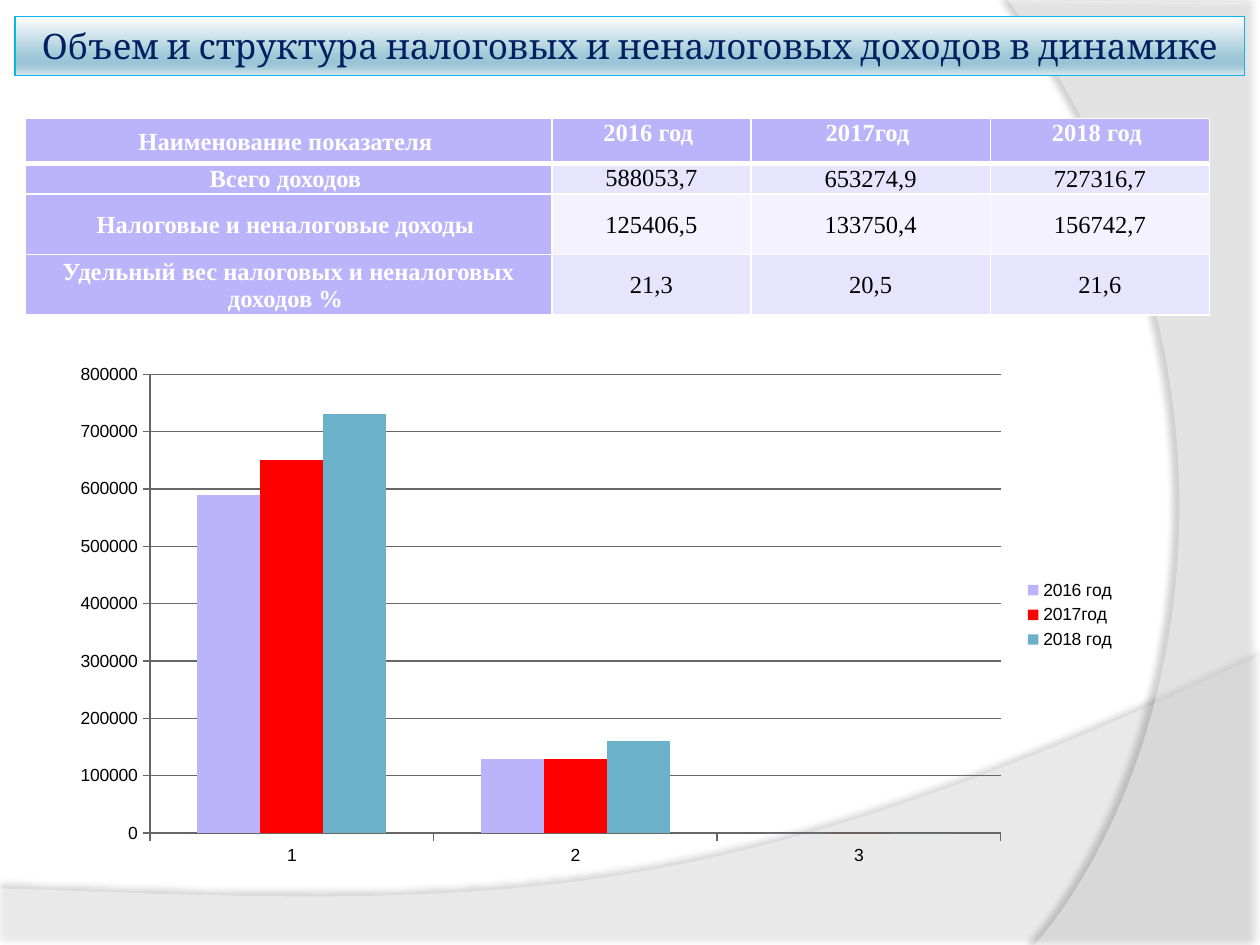
from dataclasses import dataclass

from lxml.etree import SubElement
from pptx import Presentation
from pptx.chart.data import CategoryChartData
from pptx.dml.color import RGBColor
from pptx.enum.chart import XL_CHART_TYPE, XL_LEGEND_POSITION, XL_TICK_MARK
from pptx.enum.shapes import MSO_SHAPE
from pptx.enum.text import MSO_ANCHOR, PP_ALIGN
from pptx.oxml import parse_xml
from pptx.oxml.ns import nsdecls, qn
from pptx.util import Inches, Pt


@dataclass(frozen=True)
class Theme:
    white: str = "FFFFFF"
    black: str = "000000"
    navy: str = "002060"
    title_line: str = "0AB3EC"
    title_stops: tuple = ((0, "FEFEFF"), (68, "9EC7D7"), (81, "9BC5D6"),
                          (86, "A5CAD9"), (100, "DAE8EE"))
    lilac: str = "BBB4FB"
    bands: tuple = ("E7E5FD", "F3F2FE")
    series: tuple = ("BBB4FB", "FF0000", "6BB1C9")
    grid: str = "666666"
    title_font: str = "Cambria"
    table_font: str = "Times New Roman"
    chart_font: str = "Arial"
    title_size: int = 20
    table_size: int = 14
    chart_size: int = 10


def rgb(value):
    return RGBColor.from_string(value)


class SlideBuilder:
    def __init__(self, slide, theme):
        self.s = slide
        self.theme = theme

    def style(self, p, font, size, color, bold=False):
        p.alignment = PP_ALIGN.CENTER
        p.font.name = font
        p.font.size = Pt(size)
        p.font.bold = bold
        p.font.color.rgb = rgb(color)

    def wave(self, corners, controls, opacity, shadow_opacity, distance, angle):
        pts = [(Inches(x), Inches(y)) for x, y in corners]
        fb = self.s.shapes.build_freeform(*pts[0])
        fb.add_line_segments(pts[1:], close=True)
        sp = fb.convert_to_shape()
        sp.fill.solid()
        sp.fill.fore_color.rgb = rgb(self.theme.white)
        sp.line.fill.background()
        spPr = sp._element.spPr
        curve = list(spPr.iter(qn("a:lnTo")))[-1]
        curve.tag = qn("a:cubicBezTo")
        for i, (x, y) in enumerate(controls):
            curve.insert(i, parse_xml(f'<a:pt {nsdecls("a")} x="{Inches(x) - sp.left}" '
                                      f'y="{Inches(y) - sp.top}"/>'))
        color = spPr.find(qn("a:solidFill"))[0]
        SubElement(color, qn("a:alpha"), val=str(opacity * 1000))
        spPr.append(parse_xml(
            f'<a:effectLst {nsdecls("a")}><a:outerShdw blurRad="{Pt(4)}" '
            f'dist="{Pt(distance)}" dir="{angle * 60000}" algn="ctr" rotWithShape="0">'
            f'<a:srgbClr val="{self.theme.black}"><a:alpha val="{shadow_opacity * 1000}"/>'
            '</a:srgbClr></a:outerShdw></a:effectLst>'))

    def title(self, text, x, y, w, h):
        t = self.theme
        sp = self.s.shapes.add_shape(MSO_SHAPE.RECTANGLE, Inches(x), Inches(y),
                                     Inches(w), Inches(h))
        sp.shadow.inherit = False
        sp.line.color.rgb = rgb(t.title_line)
        sp.line.width = Pt(0.75)
        stops = "".join(f'<a:gs pos="{pos * 1000}"><a:srgbClr val="{c}"/></a:gs>'
                        for pos, c in t.title_stops)
        sp._element.spPr.find(qn("a:prstGeom")).addnext(parse_xml(
            f'<a:gradFill {nsdecls("a")} rotWithShape="1"><a:gsLst>{stops}</a:gsLst>'
            '<a:lin ang="5400000" scaled="0"/></a:gradFill>'))
        tf = sp.text_frame
        tf.word_wrap = True
        tf.vertical_anchor = MSO_ANCHOR.MIDDLE
        p = tf.paragraphs[0]
        p.text = text
        self.style(p, t.title_font, t.title_size, t.navy)

    def borders(self, cell, bottom, top):
        tcPr = cell._tc.get_or_add_tcPr()
        widths = {"lnL": 1, "lnR": 1, "lnT": top, "lnB": bottom}
        for i, (tag, width) in enumerate(widths.items()):
            tcPr.insert(i, parse_xml(
                f'<a:{tag} {nsdecls("a")} w="{Pt(width)}"><a:solidFill>'
                f'<a:srgbClr val="{self.theme.white}"/></a:solidFill></a:{tag}>'))

    def table(self, rows, x, y, widths, heights):
        t = self.theme
        tbl = self.s.shapes.add_table(len(rows), len(widths), Inches(x), Inches(y),
                                      Inches(sum(widths)), Inches(sum(heights))).table
        for col, w in zip(tbl.columns, widths):
            col.width = Inches(w)
        for row, h in zip(tbl.rows, heights):
            row.height = Inches(h)
        for i, row in enumerate(rows):
            for j, text in enumerate(row):
                cell = tbl.cell(i, j)
                head = i == 0 or j == 0
                top_aligned = (i == 0 and j > 0) or (i, j) == (1, 1)
                cell.vertical_anchor = MSO_ANCHOR.TOP if top_aligned else MSO_ANCHOR.MIDDLE
                cell.margin_left = cell.margin_right = cell.margin_top = Inches(0.01)
                cell.margin_bottom = 0
                cell.fill.solid()
                cell.fill.fore_color.rgb = rgb(t.lilac if head else t.bands[(i - 1) % 2])
                self.borders(cell, 3 if i == 0 else 1, 3 if i == 1 else 1)
                p = cell.text_frame.paragraphs[0]
                p.text = text
                self.style(p, t.table_font, t.table_size, t.white if head else t.black, head)

    def chart(self, categories, series, x, y, w, h):
        t = self.theme
        data = CategoryChartData()
        data.categories = categories
        for name, values in series:
            data.add_series(name, values)
        chart = self.s.shapes.add_chart(XL_CHART_TYPE.COLUMN_CLUSTERED, Inches(x), Inches(y),
                                        Inches(w), Inches(h), data).chart
        chart.has_title = False
        chart.font.name = t.chart_font
        chart.font.size = Pt(t.chart_size)
        chart.font.color.rgb = rgb(t.black)
        chart.has_legend = True
        chart.legend.position = XL_LEGEND_POSITION.RIGHT
        chart.legend.include_in_layout = False
        plot = chart.plots[0]
        plot.vary_by_categories = False
        plot.gap_width = 150
        for ser, color in zip(plot.series, t.series):
            ser.format.fill.solid()
            ser.format.fill.fore_color.rgb = rgb(color)
        axis = chart.value_axis
        axis.minimum_scale, axis.maximum_scale, axis.major_unit = 0, 800000, 100000
        axis.tick_labels.number_format = "General"
        axis.tick_labels.number_format_is_linked = False
        axis.has_major_gridlines = True
        for ax in (axis, chart.category_axis):
            ax.major_tick_mark = XL_TICK_MARK.OUTSIDE
            ax.format.line.color.rgb = rgb(t.grid)
        axis.major_gridlines.format.line.color.rgb = rgb(t.grid)


def main():
    prs = Presentation()
    prs.slide_width, prs.slide_height = Inches(10), Inches(7.5)
    b = SlideBuilder(prs.slides.add_slide(prs.slide_layouts[6]), Theme())

    b.wave([(0, 7.05), (0, 7.51), (10, 7.51), (10, 5.2), (0, 7.05)],
           [(5.59, 7.29), (3.91, 7.19)], 45, 35, 3.5, 270)
    b.wave([(10, 0.02), (10, 7.5), (8.21, 7.5), (8, 0)],
           [(9.35, 6.19), (10.18, 3)], 40, 45, 4, 180)
    b.title("Объем и структура налоговых и неналоговых доходов в динамике",
            0.12, 0.13, 9.76, 0.47)

    years = ["2016 год ", "2017год ", "2018 год "]
    rows = [
        ["Наименование показателя ", *years],
        ["Всего доходов ", "588053,7", "653274,9", "727316,7"],
        ["Налоговые и неналоговые доходы ", "125406,5", "133750,4", "156742,7"],
        ["Удельный вес налоговых и неналоговых доходов % ", "21,3", "20,5", "21,6"],
    ]
    b.table(rows, 0.2, 0.94, (4.18, 1.58, 1.9, 1.74), (0.36, 0.24, 0.48, 0.48))

    values = [(590000, 130000, 0), (650000, 130000, 0), (730000, 160000, 0)]
    b.chart(["1", "2", "3"], zip(years, values), 0.47, 2.81, 8.52, 4.14)
    prs.save("out.pptx")


if __name__ == "__main__":
    main()
